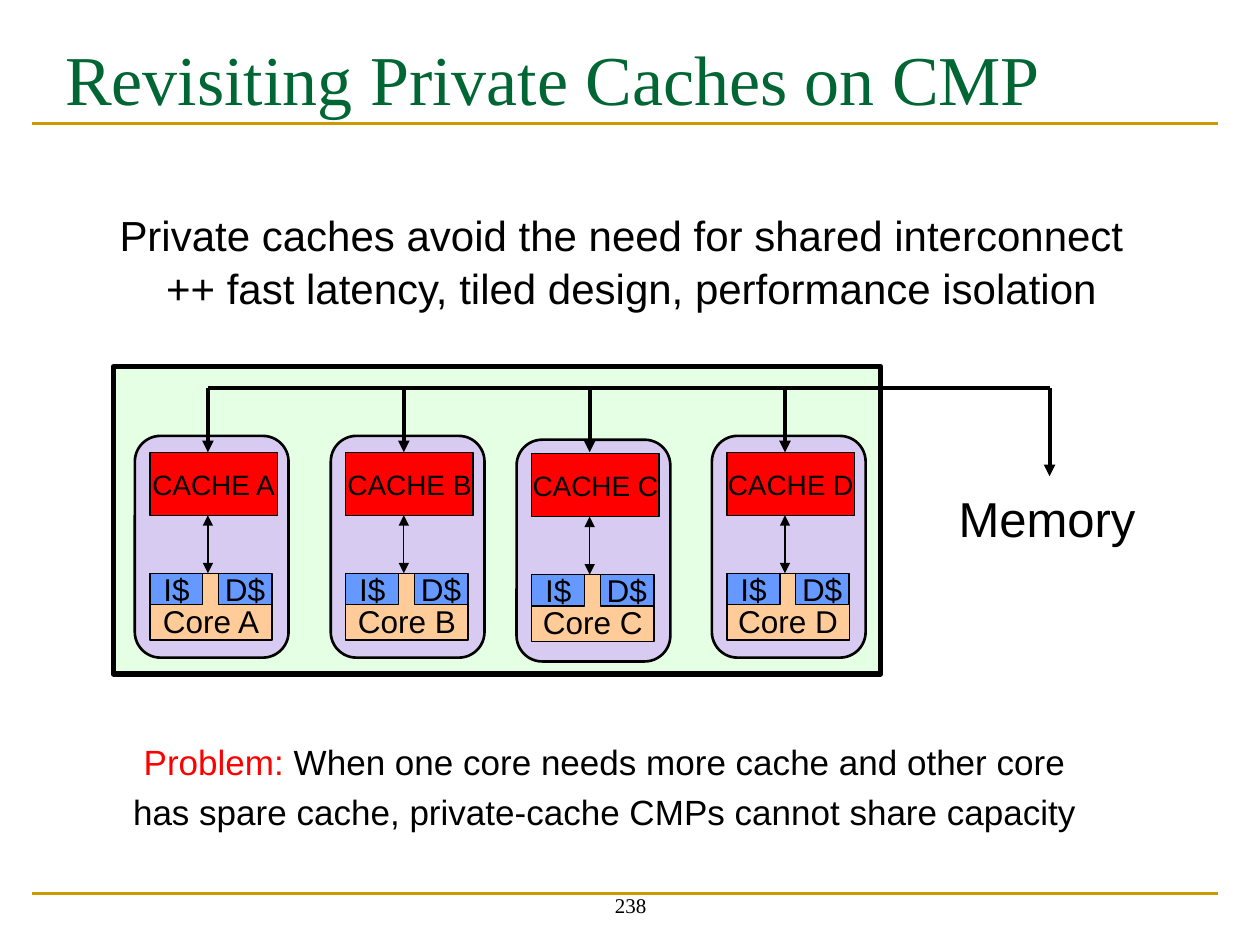
from lxml import etree
from pptx import Presentation
from pptx.dml.color import RGBColor
from pptx.enum.shapes import MSO_CONNECTOR, MSO_SHAPE
from pptx.enum.text import MSO_ANCHOR, PP_ALIGN
from pptx.oxml.ns import qn
from pptx.util import Inches, Pt

RECT, ROUNDED = MSO_SHAPE.RECTANGLE, MSO_SHAPE.ROUNDED_RECTANGLE
STRAIGHT = MSO_CONNECTOR.STRAIGHT
TOP, MIDDLE, BOTTOM = MSO_ANCHOR.TOP, MSO_ANCHOR.MIDDLE, MSO_ANCHOR.BOTTOM
LEFT, CENTER = PP_ALIGN.LEFT, PP_ALIGN.CENTER

COLORS = {
    "ink": "000000", "title": "006633", "rule": "CC9900", "chip": "CCFFCC",
    "tile": "CC99FF", "core": "FFCC99", "l1": "6699FF", "cache": "FF0000",
    "problem": "FF0000",
}
SANS, SERIF = "Arial", "Times New Roman"
COLUMNS, ROWS = 100, 75


class Deck:
    """Style and current slide; lengths are columns and rows of the grid."""

    def __init__(self):
        self.prs = Presentation()
        self.prs.slide_width, self.prs.slide_height = Inches(10), Inches(7.5)
        self.slide = self.prs.slides.add_slide(self.prs.slide_layouts[6])

    def grid(self, x, y):
        return (round(self.prs.slide_width * x / COLUMNS),
                round(self.prs.slide_height * y / ROWS))

    def color(self, name):
        return RGBColor.from_string(COLORS[name])

    def fill_text(self, frame, lines, size, font=SANS, color="ink", align=LEFT, before=0):
        """Each line is a list of (words, color) runs or a plain string."""
        for i, line in enumerate(lines):
            paragraph = frame.paragraphs[0] if i == 0 else frame.add_paragraph()
            paragraph.alignment = align
            paragraph.space_before = Pt(before)
            paragraph.font.size, paragraph.font.name = Pt(size), font
            runs = [(line, color)] if isinstance(line, str) else line
            if len(runs) == 1:
                paragraph.font.color.rgb = self.color(runs[0][1])
            for words, tint in runs:
                run = paragraph.add_run()
                run.text = words
                if len(runs) > 1:
                    run.font.color.rgb = self.color(tint)

    def text(self, x, y, w, h, lines, size, anchor=TOP, **style):
        box = self.slide.shapes.add_textbox(*self.grid(x, y), *self.grid(w, h))
        frame = box.text_frame
        frame.word_wrap, frame.vertical_anchor = True, anchor
        self.fill_text(frame, lines, size, **style)
        return frame

    def box(self, x, y, w, h, fill, weight=0.75, kind=RECT, opacity=100,
            label=None, size=18, anchor=MIDDLE):
        shape = self.slide.shapes.add_shape(kind, *self.grid(x, y), *self.grid(w, h))
        shape.shadow.inherit = False
        shape.fill.solid()
        shape.fill.fore_color.rgb = self.color(fill)
        if opacity < 100:
            tint = shape._element.spPr.find(f"{qn('a:solidFill')}/{qn('a:srgbClr')}")
            etree.SubElement(tint, qn("a:alpha"), val=str(opacity * 1000))
        shape.line.color.rgb = self.color("ink")
        shape.line.width = Pt(weight)
        if label:
            frame = shape.text_frame
            frame.word_wrap, frame.vertical_anchor = False, anchor
            frame.margin_left = frame.margin_right = 0
            frame.margin_top = frame.margin_bottom = 0
            self.fill_text(frame, [label], size, align=CENTER)

    def line(self, x1, y1, x2, y2, weight=2.25, color="ink", ends=()):
        connector = self.slide.shapes.add_connector(
            STRAIGHT, *self.grid(x1, y1), *self.grid(x2, y2))
        connector.line.color.rgb = self.color(color)
        connector.line.width = Pt(weight)
        properties = connector._element.spPr
        outline = properties.find(qn("a:ln"))
        for end in ends:
            etree.SubElement(outline, qn(f"a:{end}"), type="triangle")
        etree.SubElement(properties, qn("a:effectLst"))

    def tile(self, x, y):
        self.box(x, y, 12.2, 17.6, "tile", 1.5, ROUNDED, opacity=50)

    def core(self, name, x, y):
        """Core with its two first-level caches and its private cache."""
        self.box(x, y + 9.6, 9.7, 5.3, "core", label=f"Core {name}", anchor=BOTTOM)
        for offset, label in ((0, "I$"), (5.45, "D$")):
            self.box(x + offset, y + 9.6, 4.2, 2.5, "l1", label=label)
        self.line(x + 4.6, y + 5, x + 4.6, y + 9.6, 0.75, ends=("headEnd", "tailEnd"))
        self.box(x, y, 10.1, 5, "cache", label=f"CACHE {name}", size=16)


def main():
    deck = Deck()

    # Rules, page number and title
    for rule_y in (70.9, 9.8):
        deck.line(2.5, rule_y, 96.7, rule_y, 1.5, "rule")
    deck.text(34.2, 68.3, 31.7, 5, ["238"], 12, BOTTOM, font=SERIF, align=CENTER)
    deck.text(4.2, 2.3, 88.4, 7.2, ["Revisiting Private Caches on CMP"], 40,
              font=SERIF, color="title")

    # Benefits
    benefits = deck.text(8.5, 16.1, 86.5, 9, [
        "Private caches avoid the need for shared interconnect",
        "++ fast latency, tiled design, performance isolation"], 24)
    gain = benefits.paragraphs[1]
    gain.space_before = Pt(1.5)
    gain._p.get_or_add_pPr().set("marL", str(Inches(0.37)))

    # Chip with four tiles; tile C sits slightly lower
    deck.box(9, 29.1, 60.9, 24.4, "chip", 3, opacity=50)
    tiles = [("A", 10.7, 0, 0), ("B", 26.25, 0, 0),
             ("C", 41, 0.3, 0.1), ("D", 56.5, 0, 0)]
    for name, x, tile_drop, core_drop in tiles:
        deck.tile(x, 34.6 + tile_drop)
    for name, x, tile_drop, core_drop in tiles:
        deck.core(name, x + 1.2, 35.9 + core_drop)

    # Bus from the caches to memory
    bus_y = 30.8
    drops = [x + 5.8 for name, x, tile_drop, core_drop in tiles]
    deck.line(drops[0], bus_y, drops[-1], bus_y)
    for drop_x in drops:
        deck.line(drop_x, bus_y, drop_x, 35.9, ends=("tailEnd",))
    deck.line(drops[-1], bus_y, 83.3, bus_y)
    deck.line(83.3, bus_y, 83.3, 37.8, ends=("tailEnd",))
    deck.text(75.1, 38.3, 16.6, 5.7, ["Memory"], 28)

    # Problem
    deck.text(8.5, 58.3, 79, 8.3, [
        [("Problem:", "problem"),
         (" When one core needs more cache and other core", "ink")],
        "has spare cache, private-cache CMPs cannot share capacity"],
        20, align=CENTER, before=4.5)

    deck.prs.save("out.pptx")


if __name__ == "__main__":
    main()
